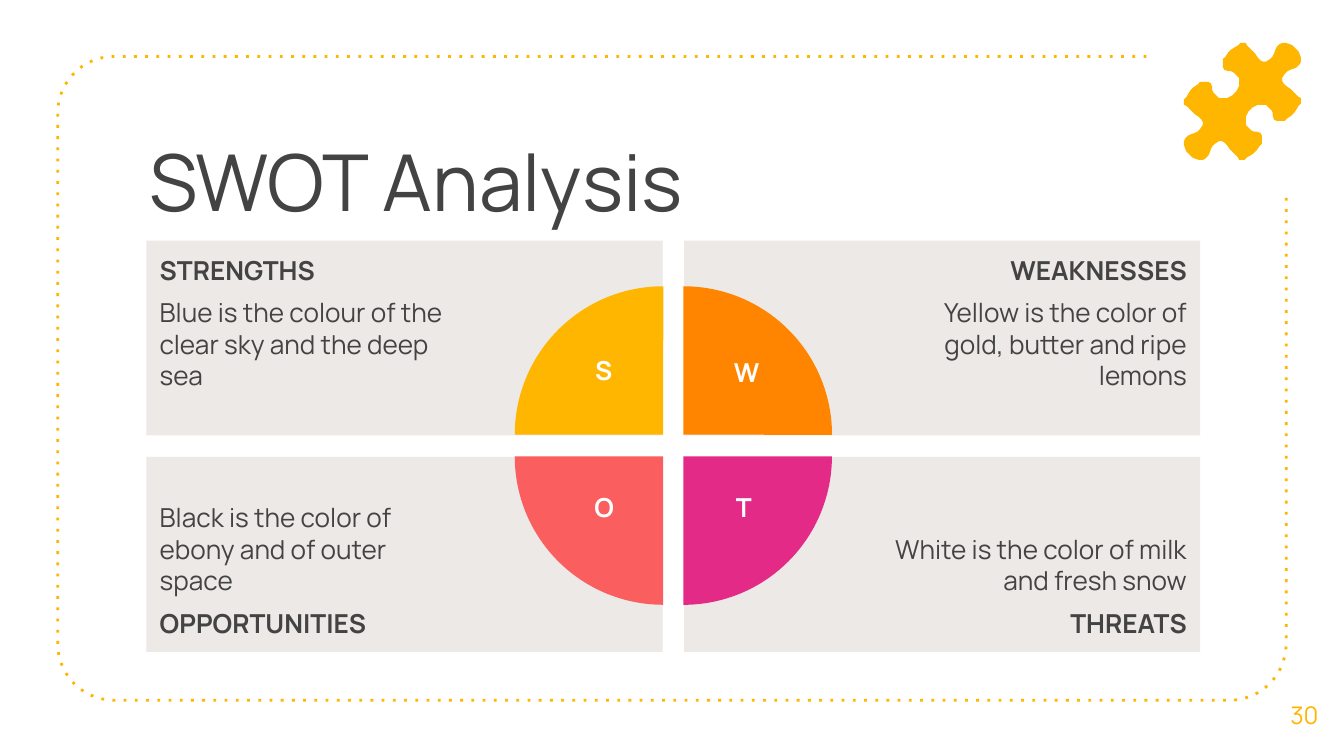
from math import cos, radians, sin

from pptx import Presentation
from pptx.dml.color import RGBColor
from pptx.enum.dml import MSO_LINE
from pptx.enum.shapes import MSO_SHAPE
from pptx.enum.text import MSO_ANCHOR, MSO_AUTO_SIZE, PP_ALIGN
from pptx.util import Inches, Pt

LEFT, CENTER, RIGHT = PP_ALIGN.LEFT, PP_ALIGN.CENTER, PP_ALIGN.RIGHT
TOP, MIDDLE, BOTTOM = MSO_ANCHOR.TOP, MSO_ANCHOR.MIDDLE, MSO_ANCHOR.BOTTOM
RECT, PIE = MSO_SHAPE.RECTANGLE, MSO_SHAPE.PIE
ROUND_DOT, NO_FIT = MSO_LINE.ROUND_DOT, MSO_AUTO_SIZE.NONE
FONT = "Manrope"
YELLOW, ORANGE, RED, PINK = "FFB600", "FF8400", "FA5E5E", "E42A87"
GREY, PANEL, WHITE = "434343", "ECE9E6", "FFFFFF"


def rgb(color):
    return RGBColor.from_string(color)


def add_run(p, text, size, color, align=LEFT, bold=False):
    """Add one formatted run and align its paragraph."""
    p.alignment = align
    r = p.add_run()
    r.text = text
    r.font.name, r.font.size, r.font.bold = FONT, Pt(size), bold
    r.font.color.rgb = rgb(color)


prs = Presentation()
prs.slide_width = Inches(10)
prs.slide_height = prs.slide_width * 9 // 16
s = prs.slides.add_slide(prs.slide_layouts[5])

# Dotted frame with three rounded corners, open at the top right
radius = 0.42
frame = [(8.53, 0.42)]
for cx, cy, start in ((0.85, 0.84, 270), (0.85, 4.79, 180), (9.15, 4.79, 90)):
    for step in range(0, 91, 6):
        angle = radians(start - step)
        frame.append((cx + radius * cos(angle), cy + radius * sin(angle)))
frame.append((9.57, 1.46))

# Quarter outline of the puzzle piece, from notch to knob, then mirrored and turned
quarter = [
    (9.19, 0.69), (9.17, 0.71), (9.15, 0.72), (9.13, 0.73), (9.11, 0.73),
    (9.09, 0.73), (9.07, 0.73), (9.05, 0.71), (9.03, 0.69), (9.02, 0.67),
    (9.02, 0.65), (9.01, 0.62), (8.99, 0.61), (8.97, 0.61), (8.95, 0.61),
    (8.93, 0.61), (8.91, 0.63), (8.88, 0.65), (8.86, 0.67), (8.84, 0.7),
    (8.83, 0.72), (8.81, 0.74), (8.81, 0.76), (8.81, 0.78), (8.83, 0.79),
    (8.86, 0.82), (8.89, 0.85), (8.92, 0.87), (8.94, 0.89), (8.95, 0.91),
    (8.95, 0.93), (8.93, 0.96), (8.91, 0.98), (8.89, 0.99), (8.86, 1),
    (8.84, 1.01), (8.82, 1.03), (8.81, 1.05), (8.81, 1.08), (8.82, 1.11),
    (8.83, 1.13), (8.85, 1.15),
]
half = quarter + [(10 - y, 10 - x) for x, y in reversed(quarter)]
puzzle = half + [(18.49 - x, 1.51 - y) for x, y in half]


title = s.shapes.title
title.left, title.top = Inches(1.01), Inches(0.89)
title.width, title.height = Inches(7.97), Inches(0.94)
tf = title.text_frame
tf.auto_size, tf.word_wrap, tf.vertical_anchor = NO_FIT, True, TOP
tf.margin_left = tf.margin_right = tf.margin_top = tf.margin_bottom = Inches(0.1)
add_run(tf.paragraphs[0], "SWOT Analysis", 42, GREY)

number = s.shapes.add_textbox(Inches(9.41), Inches(5.02), Inches(0.59), Inches(0.6))
tf = number.text_frame
tf.word_wrap, tf.vertical_anchor = True, MIDDLE
tf.margin_left = tf.margin_right = tf.margin_top = tf.margin_bottom = Inches(0.1)
add_run(tf.paragraphs[0], "30", 13, YELLOW, CENTER)

# Panels: column, row, heading, description
panels = [
    (0, 0, "STRENGTHS", "Blue is the colour of the clear sky and the deep sea"),
    (1, 0, "WEAKNESSES", "Yellow is the color of gold, butter and ripe lemons"),
    (0, 1, "OPPORTUNITIES", "Black is the color of ebony and of outer space"),
    (1, 1, "THREATS", "White is the color of milk and fresh snow"),
]
for col, row, heading, description in panels:
    sp = s.shapes.add_shape(RECT, Inches(1.09 + 4 * col), Inches(1.79 + 1.61 * row),
                            Inches(3.84), Inches(1.45))
    sp.shadow.inherit = False
    sp.fill.solid()
    sp.fill.fore_color.rgb = rgb(PANEL)
    sp.line.fill.background()
    tf = sp.text_frame
    tf.word_wrap = True
    tf.vertical_anchor = BOTTOM if row else TOP
    tf.margin_left, tf.margin_right = Inches(1.5 if col else 0.1), Inches(0.1 if col else 1.5)
    tf.margin_top = tf.margin_bottom = Inches(0.1)
    lines = [(heading, True), (description, False)]
    if row:
        lines.reverse()
    for i, (text, bold) in enumerate(lines):
        p = tf.add_paragraph() if i else tf.paragraphs[0]
        if i:
            p.space_before = p.space_after = Pt(6)
        add_run(p, text, 14, GREY, RIGHT if col else LEFT, bold)

# Quarter circles, clockwise from the top left
quadrants = [(0, 0, YELLOW), (1, 0, ORANGE), (1, 1, PINK), (0, 1, RED)]
for i, (col, row, color) in enumerate(quadrants):
    sp = s.shapes.add_shape(PIE, Inches(3.83 + 0.15 * col), Inches(2.13 + 0.16 * row),
                            Inches(2.21), Inches(2.21))
    sp.adjustments[0], sp.adjustments[1] = 108, 162
    sp.rotation = 90 * i
    sp.shadow.inherit = False
    sp.fill.solid()
    sp.fill.fore_color.rgb = rgb(color)
    sp.line.fill.background()

letters = [("S", 4.33, 2.59, 0.32), ("W", 5.26, 2.6, 0.59),
           ("O", 4.3, 3.61, 0.39), ("T", 5.37, 3.61, 0.33)]
for letter, left, top, width in letters:
    box = s.shapes.add_textbox(Inches(left), Inches(top), Inches(width), Inches(0.4))
    tf = box.text_frame
    tf.word_wrap = False
    add_run(tf.paragraphs[0], letter, 14, WHITE, CENTER, True)

for outline, closed in ((frame, False), (puzzle, True)):
    points = [(Inches(x), Inches(y)) for x, y in outline]
    builder = s.shapes.build_freeform(*points[0])
    builder.add_line_segments(points[1:], close=closed)
    sp = builder.convert_to_shape()
    sp.shadow.inherit = False
    if closed:
        sp.fill.solid()
        sp.fill.fore_color.rgb = rgb(YELLOW)
        sp.line.fill.background()
    else:
        sp.fill.background()
        sp.line.color.rgb = rgb(YELLOW)
        sp.line.width = Pt(1.5)
        sp.line.dash_style = ROUND_DOT
        # The wider-spaced dot preset has no enum member
        sp._element.spPr.xpath("a:ln/a:prstDash")[0].set("val", "dot")

prs.save("out.pptx")
